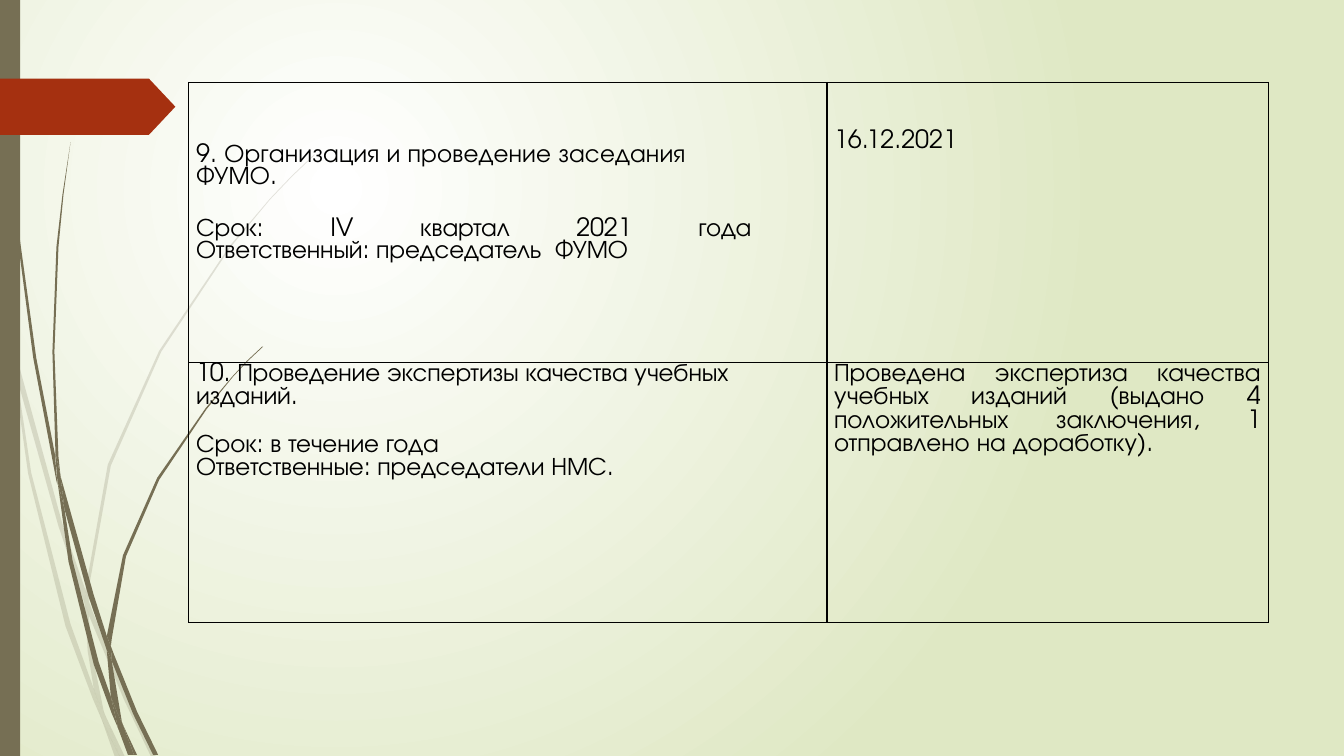
from lxml import etree
from pptx import Presentation
from pptx.dml.color import RGBColor
from pptx.enum.shapes import MSO_SHAPE
from pptx.enum.text import PP_ALIGN
from pptx.oxml import parse_xml
from pptx.oxml.ns import nsdecls, qn
from pptx.util import Cm, Pt

RECT, PENTAGON = MSO_SHAPE.RECTANGLE, MSO_SHAPE.PENTAGON
LEFT, JUSTIFY = PP_ALIGN.LEFT, PP_ALIGN.JUSTIFY
WHITE = RGBColor(0xFF, 0xFF, 0xFF)
BLACK = RGBColor(0, 0, 0)
PALE_GREEN = RGBColor(0xDF, 0xE8, 0xC4)
OLIVE = RGBColor(0x76, 0x6F, 0x54)
RED = RGBColor(0xA5, 0x30, 0x10)

GRID = Cm(0.0254)  # unit of the grass outlines

PALE_GRASS = [
    [(11, 350), (9, 322), (0, 282), (0, 299), (10, 344)],
    [(58, 522), (84, 599), (85, 586), (62, 520), (14, 345), (17, 376)],
    [(92, 607), (88, 596), (88, 610), (123, 694), (150, 751), (155, 751), (127, 692)],
    [(119, 751), (124, 751), (105, 711)],
    [(93, 683), (70, 619), (31, 469), (17, 376), (11, 350), (28, 470), (65, 621),
     (92, 693), (101, 714), (99, 707)],
    [(84, 599), (87, 646), (93, 683), (96, 692), (105, 711), (103, 706), (91, 646),
     (88, 610), (88, 608)],
    [(88, 584), (110, 462), (160, 349), (229, 245), (268, 198), (290, 175), (312, 154),
     (312, 153), (289, 175), (268, 197), (228, 244), (158, 348), (107, 461), (85, 584),
     (85, 586), (88, 596)],
    [(101, 714), (114, 751), (119, 751)],
    [(88, 608), (88, 610), (88, 596), (85, 586), (84, 599)],
    [(96, 692), (93, 683), (99, 707), (101, 714), (119, 751), (105, 711)],
]
DARK_GRASS = [
    [(7, 110), (17, 233), (33, 355), (56, 477), (57, 481), (55, 457), (55, 453),
     (36, 355), (19, 232), (8, 109), (5, 48), (4, 0), (3, 0), (4, 48)],
    [(88, 592), (106, 645), (106, 633), (106, 631), (93, 590), (60, 472), (64, 505)],
    [(113, 649), (110, 641), (111, 656), (132, 708), (152, 749), (157, 749), (136, 706)],
    [(110, 691), (98, 657), (72, 556), (64, 505), (57, 477), (68, 557), (93, 659),
     (111, 708), (117, 722), (116, 717)],
    [(60, 472), (58, 453), (54, 349), (58, 245), (63, 193), (70, 141), (62, 193),
     (56, 245), (52, 349), (55, 449)],
    [(133, 749), (136, 749), (122, 719)],
    [(57, 477), (64, 505), (60, 472), (55, 449), (55, 453)],
    [(111, 633), (125, 552), (158, 476), (205, 406), (231, 374), (245, 359), (261, 344),
     (260, 344), (245, 358), (231, 373), (204, 405), (156, 474), (122, 551), (106, 631),
     (110, 641)],
    [(117, 722), (127, 749), (131, 749)],
    [(106, 645), (110, 691), (116, 706), (122, 719), (121, 716), (111, 656), (109, 651)],
    [(106, 645), (109, 651), (111, 656), (110, 641), (106, 631), (106, 633)],
    [(116, 706), (110, 691), (116, 717), (117, 722), (130, 749), (133, 749), (122, 719)],
]

# Each cell: top margin, right margin, paragraphs with their format.
CELLS = [
    [(1.57, 1.9, [
        ("9. Организация и проведение заседания ФУМО.", dict(line=15.8, spacing=0.1)),
        ("Срок: IV квартал 2021 года\nОтветственный: председатель  ФУМО",
         dict(line=15.8, before=21.8, align=JUSTIFY, spacing=-0.1))]),
     (1.19, 0.18, [("16.12.2021", {})])],
    [(0, 0.18, [
        ("10. Проведение экспертизы качества учебных изданий.", dict(spacing=-0.1)),
        ("Срок: в течение года\nОтветственные: председатели НМС.",
         dict(before=16.9, spacing=-0.1))]),
     (0, 0.18, [
        ("Проведена экспертиза качества учебных изданий (выдано 4 положительных "
         "заключения, 1 отправлено на доработку).", dict(align=JUSTIFY))])],
]


def write(p, text, font="TeX Gyre Adventor", size=18, color=BLACK, align=LEFT,
          before=0, line=None, spacing=0):
    p.alignment = align
    p.space_before = Pt(before)
    if line:
        p.line_spacing = Pt(line)
    for i, part in enumerate(text.split("\n")):
        if i:
            p.add_line_break()
        r = p.add_run()
        r.text = part
        r.font.name, r.font.size = font, Pt(size)
        r.font.color.rgb = color
        r._r.get_or_add_rPr().set("spc", str(round(spacing * 100)))


class Deck:
    def __init__(self):
        self.prs = Presentation()
        self.prs.slide_width, self.prs.slide_height = Cm(33.87), Cm(19.05)
        self.s = self.prs.slides.add_slide(self.prs.slide_layouts[6])

    def background(self, inner, outer):
        fill = self.s.background.fill
        fill.gradient()
        for stop, color in zip(fill.gradient_stops, (inner, outer)):
            stop.color.rgb = color
        lin = next(self.s.background._cSld.iter(qn("a:lin")))
        lin.getparent().replace(lin, parse_xml(
            f'<a:path {nsdecls("a")} path="circle">'
            '<a:fillToRect l="50000" t="50000" r="100000" b="100000"/></a:path>'))

    def paint(self, sp, color, alpha=None):
        sp.shadow.inherit = False
        sp.line.fill.background()
        sp.fill.solid()
        sp.fill.fore_color.rgb = color
        if alpha:
            clr = next(sp._element.spPr.iter(qn("a:srgbClr")))
            etree.SubElement(clr, qn("a:alpha"), val=str(alpha * 1000))

    def shape(self, kind, x, y, w, h, color):
        sp = self.s.shapes.add_shape(kind, Cm(x), Cm(y), Cm(w), Cm(h))
        self.paint(sp, color)
        return sp

    def outline(self, points, color, alpha=None):
        builder = self.s.shapes.build_freeform(*points[0], scale=GRID)
        builder.add_line_segments(points[1:], close=True)
        self.paint(builder.convert_to_shape(), color, alpha)

    def table(self, x, y, widths, heights, cells):
        frame = self.s.shapes.add_table(len(heights), len(widths), Cm(x), Cm(y),
                                        Cm(sum(widths)), Cm(sum(heights)))
        table = frame.table
        table.first_row = table.horz_banding = False
        for column, width in zip(table.columns, widths):
            column.width = Cm(width)
        for i, height in enumerate(heights):
            table.rows[i].height = Cm(height)
            for j, content in enumerate(cells[i]):
                self.cell(table.cell(i, j), *content)

    def cell(self, cell, top, right, paragraphs):
        cell.margin_left, cell.margin_right = Cm(0.18), Cm(right)
        cell.margin_top, cell.margin_bottom = Cm(top), 0
        tc_pr = cell._tc.get_or_add_tcPr()
        for side in "LRTB":
            tc_pr.append(parse_xml(
                f'<a:ln{side} {nsdecls("a")} w="{Pt(1)}"><a:solidFill>'
                f'<a:srgbClr val="{BLACK}"/></a:solidFill></a:ln{side}>'))
        cell.fill.background()
        tf = cell.text_frame
        for i, (text, style) in enumerate(paragraphs):
            write(tf.add_paragraph() if i else tf.paragraphs[0], text, **style)


def main():
    deck = Deck()
    deck.background(WHITE, PALE_GREEN)
    for points in PALE_GRASS:
        deck.outline(points, OLIVE, alpha=20)
    for points in DARK_GRASS:
        deck.outline(points, OLIVE)
    deck.shape(RECT, 0, 0, 0.51, 19.05, OLIVE)
    tag = deck.shape(PENTAGON, 0, 1.98, 4.42, 1.42, RED)
    tag.adjustments[0] = 0.47
    deck.table(4.76, 2.08, [16.08, 11.12], [7.06, 6.55], CELLS)
    deck.prs.save("out.pptx")


if __name__ == "__main__":
    main()
